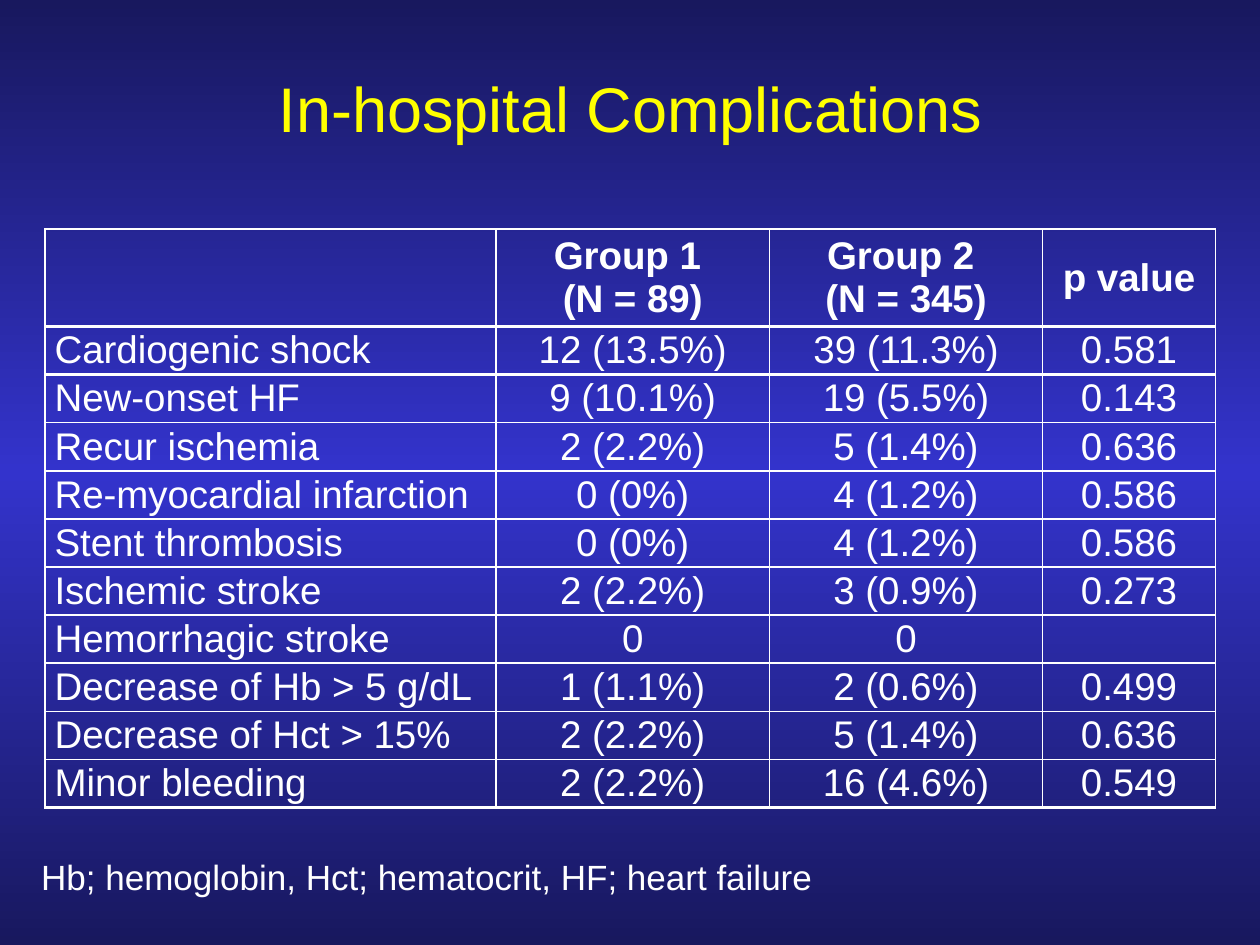
from lxml.etree import SubElement
from pptx import Presentation
from pptx.dml.color import RGBColor
from pptx.enum.text import MSO_ANCHOR, MSO_AUTO_SIZE, PP_ALIGN
from pptx.oxml.ns import qn
from pptx.util import Cm, Pt


def write(para, text, size, color, bold=False):
    span = para.add_run()
    span.text = text
    span.font.name = "Arial"
    span.font.size = Pt(size)
    span.font.bold = bold
    span.font.color.rgb = RGBColor.from_string(color)


def add_border(cell, side):
    line = SubElement(cell._tc.get_or_add_tcPr(), qn(side), w=str(Pt(1.5)))
    fill = SubElement(line, qn("a:solidFill"))
    SubElement(fill, qn("a:srgbClr"), val="FFFFFF")


deck = Presentation()
deck.slide_width = Cm(25.4)
deck.slide_height = Cm(19.05)
page = deck.slides.add_slide(deck.slide_layouts[5])

backdrop = page.background.fill
backdrop.gradient()
backdrop.gradient_angle = 270
stops = page.background._cSld.find(".//" + qn("a:gsLst"))
for stop in list(stops):
    stops.remove(stop)
for position, color in [(0, "18185E"), (50, "3333CC"), (100, "18185E")]:
    stop = SubElement(stops, qn("a:gs"), pos=str(position * 1000))
    SubElement(stop, qn("a:srgbClr"), val=color)

title = page.shapes.title
title.left, title.top, title.width, title.height = Cm(1.3), Cm(1.19), Cm(22.83), Cm(1.93)
title.text_frame.auto_size = MSO_AUTO_SIZE.NONE
title.text_frame.vertical_anchor = MSO_ANCHOR.MIDDLE
title.text_frame.paragraphs[0].alignment = PP_ALIGN.CENTER
write(title.text_frame.paragraphs[0], "In-hospital Complications", 36, "FFFF00")

complications = [
    ("", "Group 1 \n(N = 89)", "Group 2 \n(N = 345)", "p value"),
    ("Cardiogenic shock", "12 (13.5%)", "39 (11.3%)", "0.581"),
    ("New-onset HF", "9 (10.1%)", "19 (5.5%)", "0.143"),
    ("Recur ischemia", "2 (2.2%)", "5 (1.4%)", "0.636"),
    ("Re-myocardial infarction", "0 (0%)", "4 (1.2%)", "0.586"),
    ("Stent thrombosis", "0 (0%)", "4 (1.2%)", "0.586"),
    ("Ischemic stroke", "2 (2.2%)", "3 (0.9%)", "0.273"),
    ("Hemorrhagic stroke", "0", "0", ""),
    ("Decrease of Hb > 5 g/dL", "1 (1.1%)", "2 (0.6%)", "0.499"),
    ("Decrease of Hct > 15%", "2 (2.2%)", "5 (1.4%)", "0.636"),
    ("Minor bleeding", "2 (2.2%)", "16 (4.6%)", "0.549"),
]
column_widths = [9.09, 5.51, 5.51, 3.48]
header_height, row_height = 1.96, 0.97
last_row = len(complications) - 1

table = page.shapes.add_table(
    len(complications), len(column_widths), Cm(0.91), Cm(4.62),
    Cm(sum(column_widths)), Cm(header_height + last_row * row_height),
).table
table.first_row = False
table.horz_banding = False
for column, width in zip(table.columns, column_widths):
    column.width = Cm(width)

for row_index, values in enumerate(complications):
    is_header = row_index == 0
    table.rows[row_index].height = Cm(header_height if is_header else row_height)
    for column_index, value in enumerate(values):
        cell = table.cell(row_index, column_index)
        cell.margin_left = cell.margin_right = Cm(0.19)
        cell.margin_top = cell.margin_bottom = 0
        cell.vertical_anchor = MSO_ANCHOR.MIDDLE
        if row_index in (0, 1):
            add_border(cell, "a:lnT")
        if row_index in (0, last_row):
            add_border(cell, "a:lnB")
        cell.fill.background()
        if not value:
            continue
        for line_index, text in enumerate(value.split("\n")):
            frame = cell.text_frame
            para = frame.add_paragraph() if line_index else frame.paragraphs[0]
            para.alignment = PP_ALIGN.CENTER if column_index else PP_ALIGN.JUSTIFY
            write(para, text, 22, "FFFFFF", is_header)

footnote = page.shapes.add_textbox(Cm(0.58), Cm(17.12), Cm(23.83), Cm(1.12))
footnote.text_frame.word_wrap = True
footnote.text_frame.auto_size = MSO_AUTO_SIZE.SHAPE_TO_FIT_TEXT
write(
    footnote.text_frame.paragraphs[0],
    "Hb; hemoglobin, Hct; hematocrit, HF; heart failure", 20, "FFFFFF",
)

deck.save("out.pptx")
